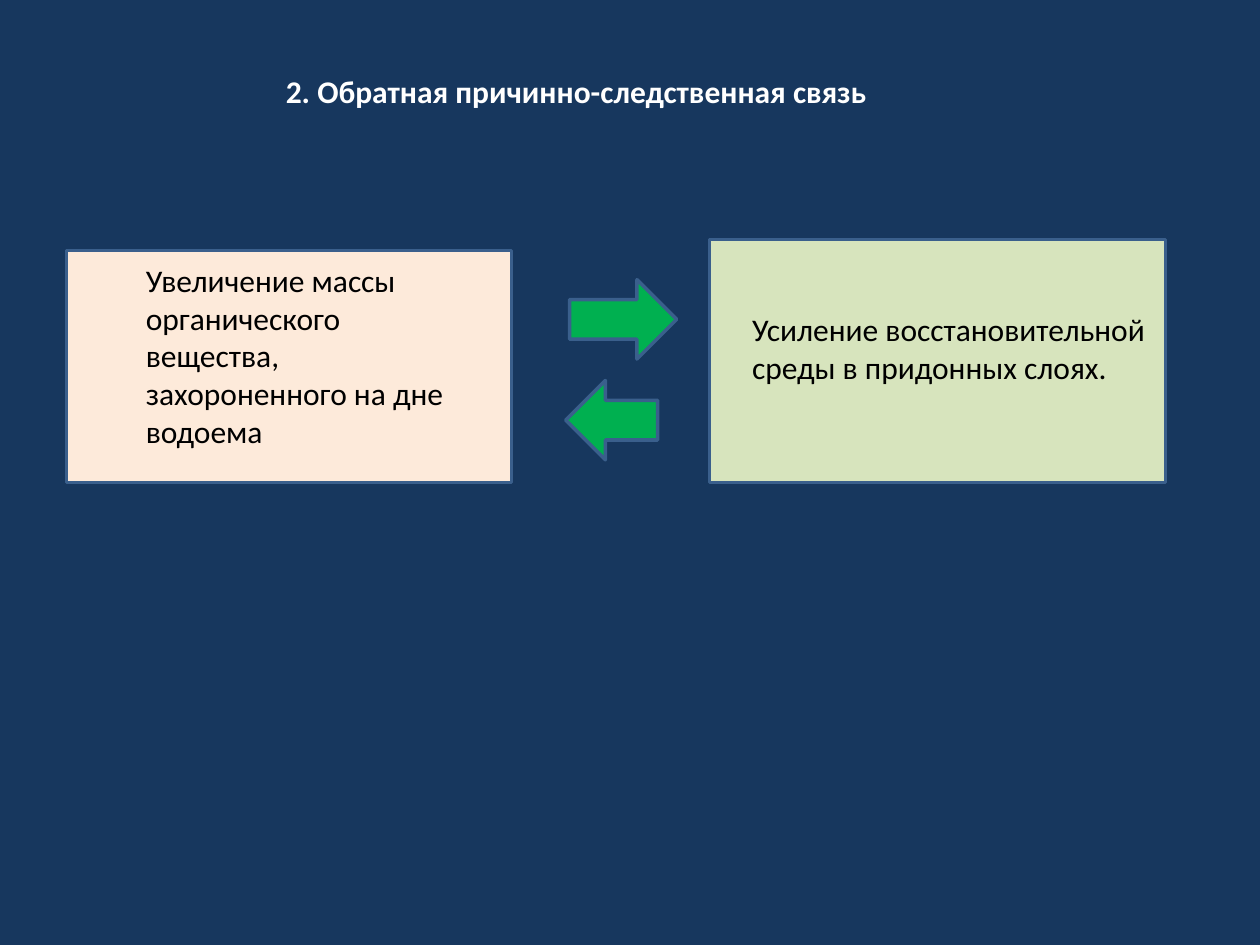
import pptx
import pptx.util
import pptx.dml.color
import pptx.enum.shapes
import pptx.enum.text

Inches = pptx.util.Inches
RGBColor = pptx.dml.color.RGBColor
KIND = pptx.enum.shapes.MSO_SHAPE

NAVY = RGBColor(0x17, 0x37, 0x5E)
EDGE = RGBColor(0x3A, 0x5F, 0x8C)
PEACH = RGBColor(0xFD, 0xEA, 0xDA)
OLIVE = RGBColor(0xD7, 0xE4, 0xBD)
GREEN = RGBColor(0x00, 0xB0, 0x50)
WHITE = RGBColor(0xFF, 0xFF, 0xFF)
BLACK = RGBColor(0x00, 0x00, 0x00)

deck = pptx.Presentation()
deck.slide_width = Inches(10)
deck.slide_height = Inches(7.5)
slide = deck.slides.add_slide(deck.slide_layouts[6])
slide.background.fill.solid()
slide.background.fill.fore_color.rgb = NAVY


def add_form(kind, left, top, width, height, color):
    form = slide.shapes.add_shape(
        kind, Inches(left), Inches(top), Inches(width), Inches(height))
    form.shadow.inherit = False
    form.fill.solid()
    form.fill.fore_color.rgb = color
    form.line.color.rgb = EDGE
    form.line.width = pptx.util.Pt(2)


def add_label(words, left, top, width, height, color, title=False):
    box = slide.shapes.add_textbox(
        Inches(left), Inches(top), Inches(width), Inches(height))
    frame = box.text_frame
    frame.word_wrap = not title
    frame.auto_size = pptx.enum.text.MSO_AUTO_SIZE.SHAPE_TO_FIT_TEXT
    run = frame.paragraphs[0].add_run()
    run.text = words
    run.font.name = "Calibri"
    run.font.size = pptx.util.Pt(18)
    run.font.bold = title
    run.font.color.rgb = color


add_form(KIND.RECTANGLE, 0.53, 1.99, 3.53, 1.84, PEACH)
add_form(KIND.RECTANGLE, 5.63, 1.9, 3.62, 1.93, OLIVE)

add_label("2. Обратная причинно-следственная связь",
          2.17, 0.52, 4.86, 0.4, WHITE, title=True)
add_label("Увеличение массы органического вещества, захороненного на дне водоема",
          1.06, 2.02, 2.76, 1.62, BLACK)
add_label("Усиление восстановительной среды в придонных слоях.",
          5.87, 2.41, 3.39, 0.71, BLACK)

add_form(KIND.RIGHT_ARROW, 4.52, 2.22, 0.85, 0.63, GREEN)
add_form(KIND.LEFT_ARROW, 4.49, 3.02, 0.73, 0.63, GREEN)

deck.save("out.pptx")
